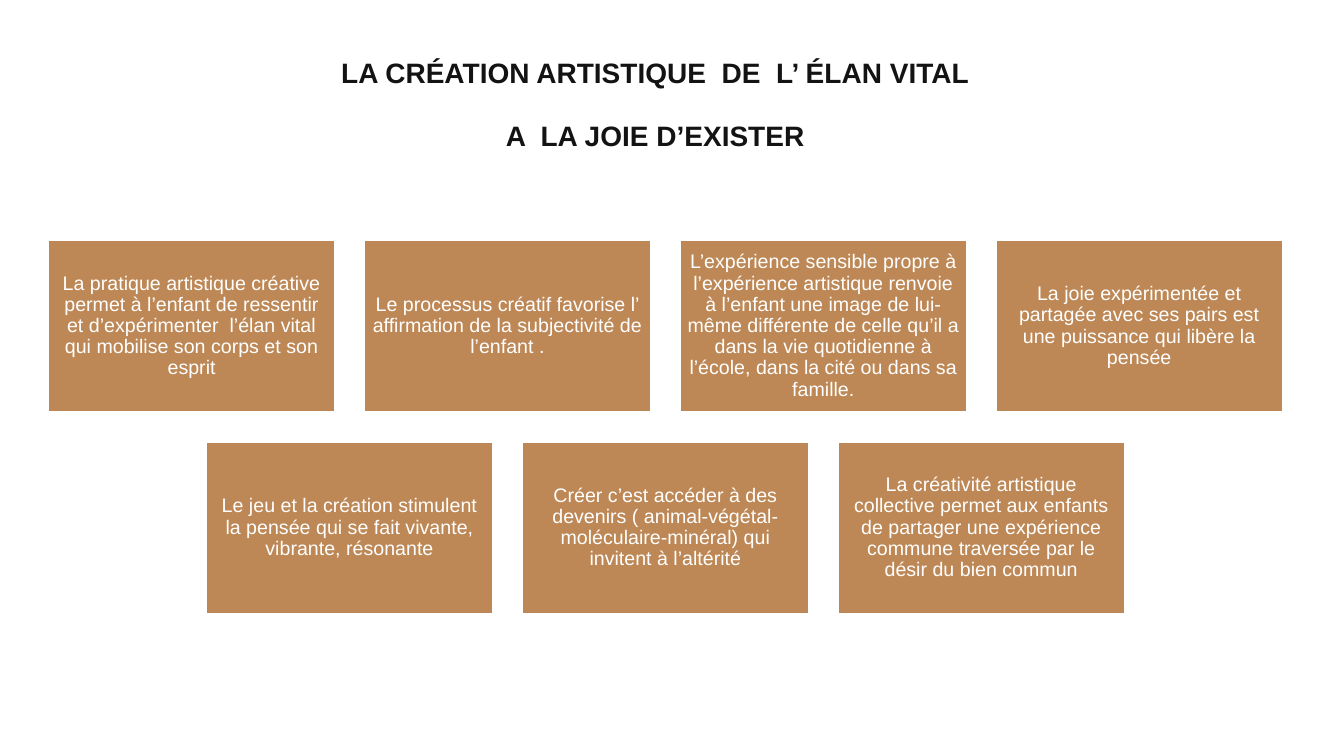
from pptx import Presentation
from pptx.dml.color import RGBColor
from pptx.enum.shapes import MSO_SHAPE
from pptx.enum.text import MSO_ANCHOR, MSO_AUTO_SIZE, PP_ALIGN
from pptx.util import Cm, Pt

RECTANGLE = MSO_SHAPE.RECTANGLE
MIDDLE, BOTTOM = MSO_ANCHOR.MIDDLE, MSO_ANCHOR.BOTTOM
NO_AUTOFIT = MSO_AUTO_SIZE.NONE
CENTER = PP_ALIGN.CENTER

BROWN = RGBColor(0xBE, 0x88, 0x56)
WHITE = RGBColor(0xFF, 0xFF, 0xFF)
INK = RGBColor(0x13, 0x13, 0x13)
FONT = "Arial"

CARD_WIDTH, CARD_HEIGHT = 7.24, 4.34
COLUMN_STEP, ROW_STEP = 7.96, 5.08
ROWS_CENTER, ROWS_TOP = 16.77, 6.05

TITLE = "LA CRÉATION ARTISTIQUE  DE  L’ ÉLAN VITAL\nA  LA JOIE D’EXISTER"
IDEA_ROWS = [
    [
        "La pratique artistique créative permet à l’enfant de ressentir et "
        "d’expérimenter  l’élan vital qui mobilise son corps et son esprit",
        "Le processus créatif favorise l’ affirmation de la subjectivité de l’enfant .",
        "L’expérience sensible propre à l’expérience artistique renvoie à l’enfant "
        "une image de lui-même différente de celle qu’il a dans la vie quotidienne "
        "à l’école, dans la cité ou dans sa famille.",
        "La joie expérimentée et partagée avec ses pairs est une puissance qui "
        "libère la pensée",
    ],
    [
        "Le jeu et la création stimulent la pensée qui se fait vivante, vibrante, "
        "résonante",
        "Créer c’est accéder à des devenirs ( animal-végétal- moléculaire-minéral) "
        "qui invitent à l’altérité",
        "La créativité artistique collective permet aux enfants de partager une "
        "expérience commune traversée par le désir du bien commun",
    ],
]


def format_text(tf, size, color, bold=False):
    for p in tf.paragraphs:
        p.alignment = CENTER
        p.line_spacing = 0.9
        for r in p.runs:
            r.font.name = FONT
            r.font.size = Pt(size)
            r.font.bold = bold
            r.font.color.rgb = color


def set_title(s):
    title = s.shapes.title
    title.left, title.top = Cm(1.9), Cm(1.37)
    title.width, title.height = Cm(30.07), Cm(2.59)
    tf = title.text_frame
    tf.text = TITLE
    tf.word_wrap = True
    tf.auto_size = NO_AUTOFIT
    tf.vertical_anchor = BOTTOM
    tf.margin_right = Cm(1.1)
    format_text(tf, 20, INK, bold=True)
    tf.paragraphs[0].space_before = Pt(0)
    tf.paragraphs[1].space_before = Pt(23)


def add_card(s, left, top, text):
    sp = s.shapes.add_shape(
        RECTANGLE, Cm(left), Cm(top), Cm(CARD_WIDTH), Cm(CARD_HEIGHT)
    )
    sp.shadow.inherit = False
    sp.fill.solid()
    sp.fill.fore_color.rgb = BROWN
    sp.line.color.rgb = WHITE
    sp.line.width = Pt(1.5)
    tf = sp.text_frame
    tf.text = text
    tf.word_wrap = True
    tf.vertical_anchor = MIDDLE
    tf.margin_left = tf.margin_right = Cm(0.15)
    tf.margin_top = tf.margin_bottom = Cm(0.15)
    format_text(tf, 14, WHITE)


def add_card_row(s, top, ideas):
    row_width = (len(ideas) - 1) * COLUMN_STEP + CARD_WIDTH
    left = ROWS_CENTER - row_width / 2
    for column, idea in enumerate(ideas):
        add_card(s, left + column * COLUMN_STEP, top, idea)


def main():
    prs = Presentation()
    prs.slide_width, prs.slide_height = Cm(33.87), Cm(19.05)
    s = prs.slides.add_slide(prs.slide_layouts.get_by_name("Title Only"))
    set_title(s)
    for row, ideas in enumerate(IDEA_ROWS):
        add_card_row(s, ROWS_TOP + row * ROW_STEP, ideas)
    prs.save("out.pptx")


if __name__ == "__main__":
    main()
